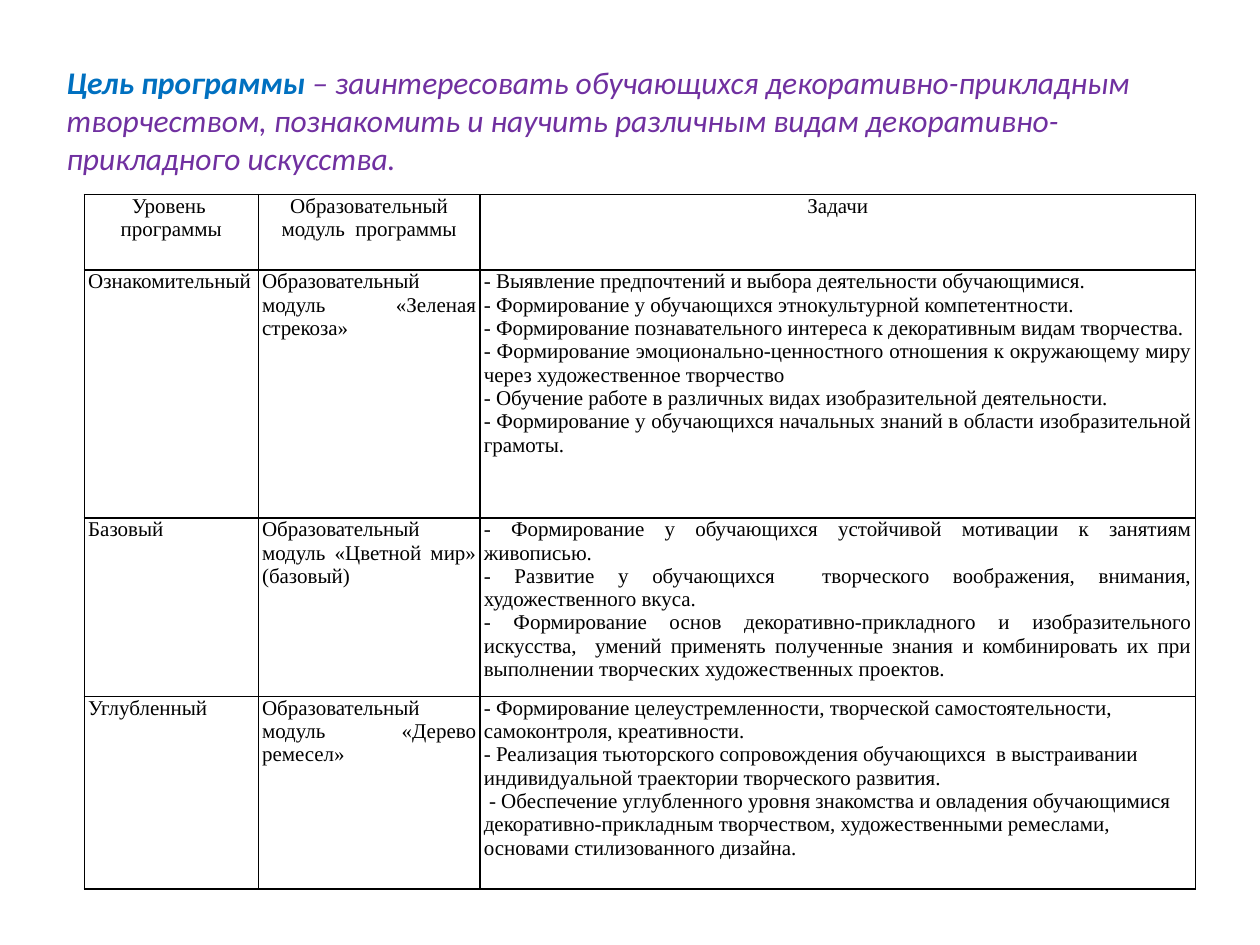
from dataclasses import dataclass

from lxml.etree import SubElement
from pptx import Presentation
from pptx.dml.color import RGBColor
from pptx.enum.text import MSO_ANCHOR, PP_ALIGN
from pptx.oxml.ns import qn
from pptx.util import Inches, Pt


@dataclass(frozen=True)
class Theme:
    title_font: str = "Calibri"
    table_font: str = "Times New Roman"
    title_size: int = 18
    table_size: int = 12
    lead: str = "0070C0"
    goal: str = "7030A0"
    ink: str = "000000"
    paper: str = "FFFFFF"
    border: int = 1


THEME = Theme()
WIDTH, HEIGHT = Inches(10), Inches(7.5)
COLUMNS = (1.38, 1.76, 5.68)
ROWS = (0.6, 1.97, 1.42, 1.53)

LEAD = "Цель программы "
GOAL = ("– заинтересовать обучающихся декоративно-прикладным творчеством, "
        "познакомить и научить различным видам декоративно-прикладного искусства.")

HEADER = (["Уровень ", "программы"], ["Образовательный модуль  программы"], ["Задачи"])
LEVELS = (
    (["Ознакомительный"], ["Образовательный модуль «Зеленая стрекоза»"], [
        "- Выявление предпочтений и выбора деятельности обучающимися.",
        "- Формирование у обучающихся этнокультурной компетентности.",
        "- Формирование познавательного интереса к декоративным видам творчества.",
        "- Формирование эмоционально-ценностного отношения к окружающему миру "
        "через художественное творчество",
        "- Обучение работе в различных видах изобразительной деятельности.",
        "- Формирование у обучающихся начальных знаний в области изобразительной грамоты.",
    ]),
    (["Базовый"], ["Образовательный модуль «Цветной мир» (базовый)"], [
        "- Формирование у обучающихся устойчивой мотивации к занятиям живописью.",
        "- Развитие у обучающихся  творческого воображения, внимания, художественного вкуса.",
        "- Формирование основ декоративно-прикладного и изобразительного искусства,  умений "
        "применять полученные знания и комбинировать их при выполнении творческих "
        "художественных проектов.",
    ]),
    (["Углубленный"], ["Образовательный модуль «Дерево ремесел»"], [
        "- Формирование целеустремленности, творческой самостоятельности, "
        "самоконтроля, креативности.",
        "- Реализация тьюторского сопровождения обучающихся  в выстраивании "
        "индивидуальной траектории творческого развития.",
        " - Обеспечение углубленного уровня знакомства и овладения обучающимися "
        "декоративно-прикладным творчеством, художественными ремеслами, "
        "основами стилизованного дизайна.",
    ]),
)


def share(left, top, width, height):
    """Turn shares of the slide's size into a box in EMU."""
    return (int(left * WIDTH), int(top * HEIGHT), int(width * WIDTH), int(height * HEIGHT))


def style_run(r, font, size, color):
    r.font.name = font
    r.font.size = Pt(size)
    r.font.color.rgb = RGBColor.from_string(color)


def add_goal(slide, box):
    tf = slide.shapes.add_textbox(*box).text_frame
    tf.word_wrap = True
    p = tf.paragraphs[0]
    for text, color, bold in ((LEAD, THEME.lead, True), (GOAL, THEME.goal, False)):
        r = p.add_run()
        r.text = text
        style_run(r, THEME.title_font, THEME.title_size, color)
        r.font.bold, r.font.italic = bold, True


def set_borders(cell):
    tc_pr = cell._tc.get_or_add_tcPr()
    for i, side in enumerate(("lnL", "lnR", "lnT", "lnB")):
        ln = SubElement(tc_pr, qn(f"a:{side}"), w=str(Pt(THEME.border)))
        fill = SubElement(ln, qn("a:solidFill"))
        SubElement(fill, qn("a:srgbClr"), val=THEME.ink)
        tc_pr.remove(ln)
        tc_pr.insert(i, ln)  # borders come before the cell's fill


def fill_cell(cell, lines, align):
    cell.margin_left = cell.margin_right = Inches(0.03)
    cell.margin_top = cell.margin_bottom = 0
    cell.vertical_anchor = MSO_ANCHOR.TOP
    cell.fill.solid()
    cell.fill.fore_color.rgb = RGBColor.from_string(THEME.paper)
    set_borders(cell)
    tf = cell.text_frame
    tf.text = "\n".join(lines)
    for p in tf.paragraphs:
        p.alignment = align
        for r in p.runs:
            style_run(r, THEME.table_font, THEME.table_size, THEME.ink)
            r.font.bold = False


def cell_align(row, col):
    if row == 0:
        return PP_ALIGN.CENTER
    if (row, col) == (len(ROWS) - 1, len(COLUMNS) - 1):
        return PP_ALIGN.LEFT
    return PP_ALIGN.JUSTIFY


def add_levels(slide, box):
    table = slide.shapes.add_table(len(ROWS), len(COLUMNS), *box).table
    table.first_row = table.horz_banding = False
    for column, part in zip(table.columns, COLUMNS):
        column.width = int(box[2] * part / sum(COLUMNS))
    for row, part in zip(table.rows, ROWS):
        row.height = int(box[3] * part / sum(ROWS))
    for i, texts in enumerate((HEADER, *LEVELS)):
        for j, lines in enumerate(texts):
            fill_cell(table.cell(i, j), lines, cell_align(i, j))


def main():
    prs = Presentation()
    prs.slide_width, prs.slide_height = WIDTH, HEIGHT
    slide = prs.slides.add_slide(prs.slide_layouts[6])
    add_goal(slide, share(0.043, 0.06, 0.945, 0.17))
    add_levels(slide, share(0.067, 0.206, 0.882, 0.735))
    prs.save("out.pptx")


if __name__ == "__main__":
    main()
